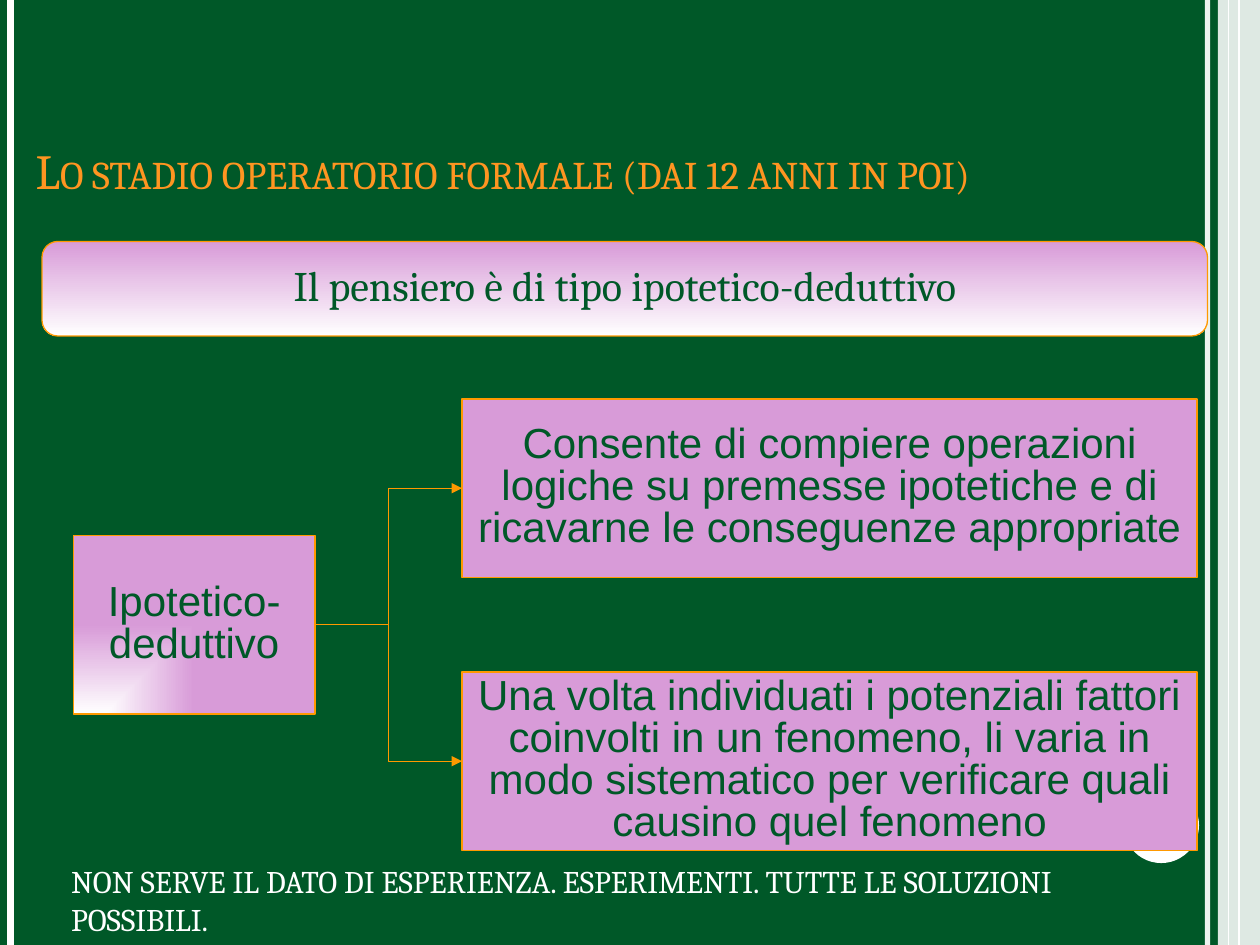
from dataclasses import dataclass
from typing import Optional

from lxml import etree
from pptx import Presentation
from pptx.dml.color import RGBColor
from pptx.enum.shapes import MSO_CONNECTOR, MSO_SHAPE
from pptx.enum.text import MSO_ANCHOR, PP_ALIGN
from pptx.oxml.ns import qn
from pptx.util import Pt

PX = 7620
W, H = 1200, 900
RECT, ROUNDED, OVAL = MSO_SHAPE.RECTANGLE, MSO_SHAPE.ROUNDED_RECTANGLE, MSO_SHAPE.OVAL
STRAIGHT, ELBOW = MSO_CONNECTOR.STRAIGHT, MSO_CONNECTOR.ELBOW
MIDDLE, TOP, BOTTOM = MSO_ANCHOR.MIDDLE, MSO_ANCHOR.TOP, MSO_ANCHOR.BOTTOM
CENTER, LEFT = PP_ALIGN.CENTER, PP_ALIGN.LEFT
RIGHT_SIDE, LEFT_SIDE = 3, 1
COLORS = {
    "green": "005828",
    "white": "FFFFFF",
    "pink": "D89BD8",
    "orange": "FF9900",
    "title": "FF9521",
}


@dataclass
class Box:
    text: str
    x: int
    y: int
    w: int
    h: int
    font: str = "Arial"
    kind: int = RECT
    gradient: Optional[tuple] = None
    corner: bool = False


@dataclass
class Label:
    text: str
    x: int
    y: int
    w: int
    h: int
    size: int
    color: str
    anchor: int
    small_caps: bool = False


@dataclass
class Rule:
    x: int
    width: float
    alpha: int = 100


def rgb(name: str) -> RGBColor:
    return RGBColor.from_string(COLORS[name])


def set_alpha(parent, percent: int) -> None:
    for color in parent.iter(qn("a:srgbClr")):
        etree.SubElement(color, qn("a:alpha")).set("val", str(percent * 1000))


def add_plain(s, kind, x: int, y: int, w: int, h: int, fill: str):
    sp = s.shapes.add_shape(kind, x * PX, y * PX, w * PX, h * PX)
    sp.shadow.inherit = False
    sp.fill.solid()
    sp.fill.fore_color.rgb = rgb(fill)
    sp.line.fill.background()
    return sp


def add_line(s, kind, x1: int, y1: int, x2: int, y2: int, color: str, width: float):
    cx = s.shapes.add_connector(kind, x1 * PX, y1 * PX, x2 * PX, y2 * PX)
    cx.line.color.rgb = rgb(color)
    cx.line.width = Pt(width)
    etree.SubElement(cx._element.spPr, qn("a:effectLst"))
    return cx


def add_rule(s, rule: Rule) -> None:
    cx = add_line(s, STRAIGHT, rule.x, 0, rule.x, H, "white", rule.width)
    if rule.alpha < 100:
        set_alpha(cx.line._ln, rule.alpha)


def set_text(sp, text: str, font: str, size: int, color: str, anchor, align):
    tf = sp.text_frame
    tf.word_wrap = True
    tf.vertical_anchor = anchor
    p = tf.paragraphs[0]
    p.text = text
    p.alignment = align
    p.font.name = font
    p.font.size = Pt(size)
    p.font.color.rgb = rgb(color)
    return p


def set_gradient(sp, colors: tuple, corner: bool) -> None:
    sp.fill.gradient()
    sp.fill.gradient_angle = 270
    for stop, color, position in zip(sp.fill.gradient_stops, colors, (0, 1)):
        stop.color.rgb = rgb(color)
        stop.position = position
    if corner:
        grad = sp._element.spPr.find(qn("a:gradFill"))
        grad.remove(grad.find(qn("a:lin")))
        shade = etree.Element(qn("a:path"), {"path": "rect"})
        etree.SubElement(shade, qn("a:fillToRect"), {"t": "100000", "r": "100000"})
        grad.find(qn("a:gsLst")).addnext(shade)


def add_box(s, box: Box):
    sp = add_plain(s, box.kind, box.x, box.y, box.w, box.h, "pink")
    if box.gradient:
        set_gradient(sp, box.gradient, box.corner)
    sp.line.color.rgb = rgb("orange")
    sp.line.width = Pt(0.75)
    p = set_text(sp, box.text, box.font, 24, "green", MIDDLE, CENTER)
    p.line_spacing = Pt(24)
    return sp


def add_label(s, label: Label) -> None:
    sp = s.shapes.add_textbox(label.x * PX, label.y * PX, label.w * PX, label.h * PX)
    p = set_text(sp, label.text, "Cambria", label.size, label.color, label.anchor, LEFT)
    if label.small_caps:
        p.font._rPr.set("cap", "small")


def add_arrow(s, source, target) -> None:
    cx = add_line(s, ELBOW, 0, 0, 0, 0, "orange", 0.75)
    cx.begin_connect(source, RIGHT_SIDE)
    cx.end_connect(target, LEFT_SIDE)
    etree.SubElement(cx.line._ln, qn("a:tailEnd")).set("type", "triangle")


BACK_RULES = [Rule(1150, 3, 93), Rule(10, 4.5), Rule(1180, 1.5)]
FRONT_RULE = Rule(1170, 0.75)
HEADLINE = Box("Il pensiero è di tipo ipotetico-deduttivo", 40, 230, 1110, 90,
               "Cambria", ROUNDED, ("pink", "white"))
CAUSE = Box("Ipotetico-deduttivo", 70, 510, 230, 170,
            gradient=("white", "pink"), corner=True)
EFFECTS = [
    "Consente di compiere operazioni logiche su premesse ipotetiche "
    "e di ricavarne le conseguenze appropriate",
    "Una volta individuati i potenziali fattori coinvolti in un fenomeno, "
    "li varia in modo sistematico per verificare quali causino quel fenomeno",
]
EFFECT_TOP, EFFECT_STEP = 380, 260
LABELS = [
    Label("Lo stadio operatorio formale (dai 12 anni in poi)",
          22, 128, 1160, 68, 28, "title", BOTTOM, True),
    Label("NON SERVE IL DATO DI ESPERIENZA. ESPERIMENTI. TUTTE LE SOLUZIONI POSSIBILI.",
          56, 815, 1078, 85, 18, "white", TOP),
]


def main() -> None:
    prs = Presentation()
    prs.slide_width, prs.slide_height = W * PX, H * PX
    s = prs.slides.add_slide(prs.slide_layouts[6])
    s.background.fill.solid()
    s.background.fill.fore_color.rgb = rgb("green")

    for rule in BACK_RULES:
        add_rule(s, rule)
    band = add_plain(s, RECT, 1160, 0, 40, H, "white")
    set_alpha(band._element.spPr, 87)
    add_rule(s, FRONT_RULE)
    add_plain(s, OVAL, 1070, 750, 72, 72, "white")

    add_box(s, HEADLINE)
    cause = add_box(s, CAUSE)
    effects = [add_box(s, Box(text, 440, EFFECT_TOP + i * EFFECT_STEP, 700, 170))
               for i, text in enumerate(EFFECTS)]
    for effect in effects:
        add_arrow(s, cause, effect)
    for label in LABELS:
        add_label(s, label)
    prs.save("out.pptx")


if __name__ == "__main__":
    main()
